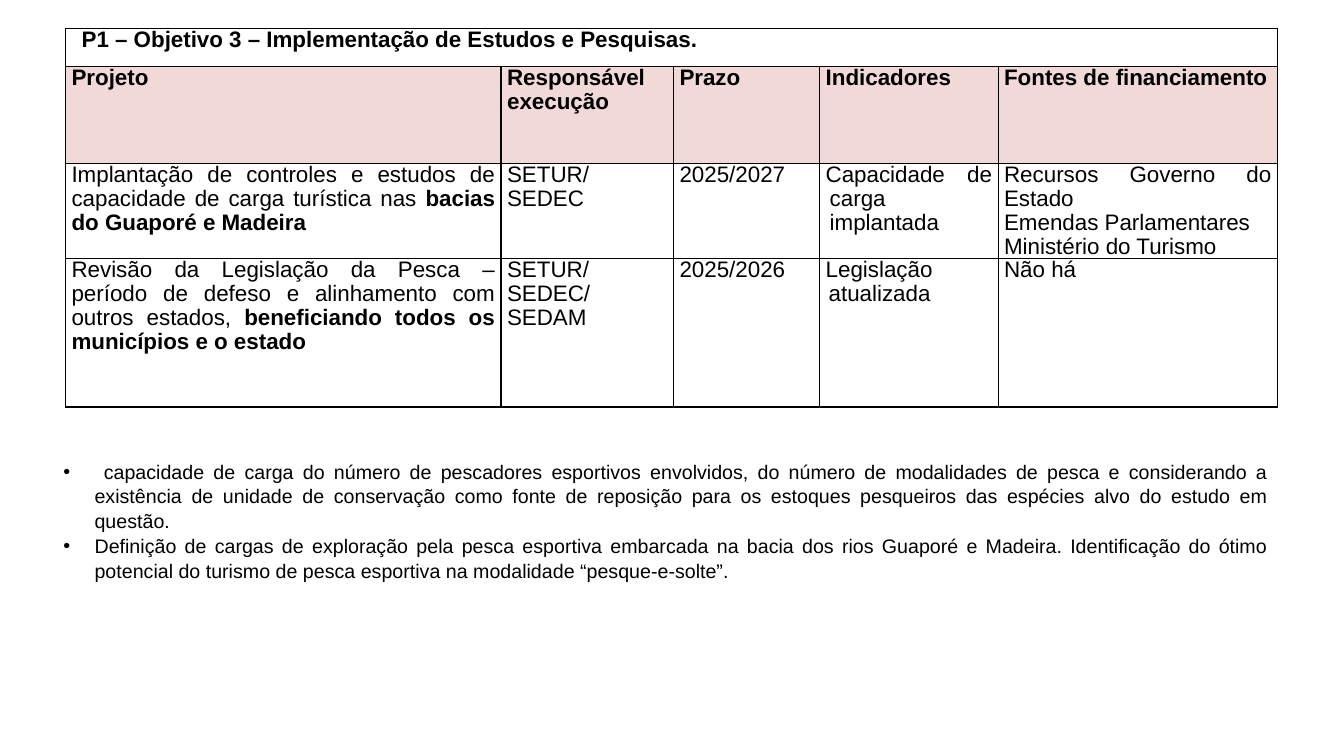
from dataclasses import dataclass

from lxml.etree import SubElement as Sub
from pptx import Presentation
from pptx.dml.color import RGBColor as RGB
from pptx.enum.text import MSO_ANCHOR as Anchor, PP_ALIGN as Align
from pptx.oxml.ns import qn
from pptx.util import Inches, Pt


@dataclass(frozen=True)
class Theme:
    font: str = "Arial"
    ink: str = "000000"
    head: str = "F0D9D7"
    cell: float = 16
    note: float = 14
    line: float = 1


@dataclass(frozen=True)
class Run:
    text: str
    bold: bool = False


@dataclass(frozen=True)
class Para:
    runs: tuple[Run, ...]
    left: float = 0
    hang: float = 0
    bullet: str = ""


LOOK = Theme()
COLS = (4.32, 1.71, 1.45, 1.77, 2.77)
ROWS = (0.38, 0.96, 0.83, 1.47)


def plain(*lines: str, bold: bool = False, left: float = 0,
          hang: float = 0, bullet: str = "") -> list[Para]:
    return [Para((Run(line, bold),), left, hang, bullet) for line in lines]


TITLE = plain("P1 – Objetivo 3 – Implementação de Estudos e Pesquisas.",
              bold=True, left=0.1)
HEADS = ("Projeto", "Responsável execução", "Prazo", "Indicadores",
         "Fontes de financiamento")
BODY = (
    (
        [Para((Run("Implantação de controles e estudos de capacidade de "
                   "carga turística nas "),
               Run("bacias do Guaporé e Madeira", True)))],
        plain("SETUR/", "SEDEC"),
        plain("2025/2027"),
        plain("Capacidade de carga implantada", left=0.04, hang=-0.04),
        plain("Recursos Governo do Estado", "Emendas Parlamentares",
              "Ministério do Turismo"),
    ),
    (
        [Para((Run("Revisão da Legislação da Pesca – período de defeso e "
                   "alinhamento com outros estados, "),
               Run("beneficiando todos os municípios e o estado", True)))],
        plain("SETUR/SEDEC/ SEDAM"),
        plain("2025/2026"),
        plain("Legislação atualizada", left=0.03, hang=-0.03),
        plain("Não há"),
    ),
)
NOTES = plain(
    " capacidade de carga do número de pescadores esportivos envolvidos, do "
    "número de modalidades de pesca e considerando a existência de unidade "
    "de conservação como fonte de reposição para os estoques pesqueiros das "
    "espécies alvo do estudo em questão. ",
    "Definição de cargas de exploração pela pesca esportiva embarcada na "
    "bacia dos rios Guaporé e Madeira. Identificação do ótimo potencial do "
    "turismo de pesca esportiva na modalidade “pesque-e-solte”. ",
    left=0.31, hang=-0.31, bullet="•")


def write(frame, paras: list[Para], size: float, space: float) -> None:
    for i, item in enumerate(paras):
        para = frame.paragraphs[0] if i == 0 else frame.add_paragraph()
        para.alignment = Align.JUSTIFY
        para.line_spacing = space
        props = para._p.get_or_add_pPr()
        props.set("marL", str(Inches(item.left)))
        props.set("indent", str(Inches(item.hang)))
        if item.bullet:
            Sub(props, qn("a:buFont"), typeface=LOOK.font)
            Sub(props, qn("a:buChar"), char=item.bullet)
        for part in item.runs:
            run = para.add_run()
            run.text = part.text
            font = run.font
            font.name, font.size, font.bold = LOOK.font, Pt(size), part.bold
            font.color.rgb = RGB.from_string(LOOK.ink)


def edge(cell) -> None:
    props = cell._tc.get_or_add_tcPr()
    for i, tag in enumerate(("lnL", "lnR", "lnT", "lnB")):
        line = props.makeelement(qn(f"a:{tag}"), {"w": str(Pt(LOOK.line))})
        fill = Sub(line, qn("a:solidFill"))
        Sub(fill, qn("a:srgbClr"), val=LOOK.ink)
        props.insert(i, line)


def draw_cell(cell, paras: list[Para], fill: str = "") -> None:
    cell.margin_left = cell.margin_right = Inches(0.06)
    cell.margin_top = cell.margin_bottom = 0
    cell.vertical_anchor = Anchor.TOP
    if fill:
        cell.fill.solid()
        cell.fill.fore_color.rgb = RGB.from_string(fill)
    else:
        cell.fill.background()
    edge(cell)
    write(cell.text_frame, paras, LOOK.cell, 0.96)


def draw_table(slide) -> None:
    grid = slide.shapes.add_table(
        len(ROWS), len(COLS), Inches(0.65), Inches(0.28),
        Inches(sum(COLS)), Inches(sum(ROWS))).table
    grid.first_row = grid.horz_banding = False
    for col, width in zip(grid.columns, COLS):
        col.width = Inches(width)
    for row, height in zip(grid.rows, ROWS):
        row.height = Inches(height)

    # Title row across all columns
    grid.cell(0, 0).merge(grid.cell(0, len(COLS) - 1))
    for c in range(len(COLS)):
        draw_cell(grid.cell(0, c), TITLE if c == 0 else [])

    # Headings and projects
    for c, head in enumerate(HEADS):
        draw_cell(grid.cell(1, c), plain(head, bold=True), LOOK.head)
    for r, row in enumerate(BODY, 2):
        for c, paras in enumerate(row):
            draw_cell(grid.cell(r, c), paras)


def draw_notes(slide) -> None:
    box = slide.shapes.add_textbox(
        Inches(0.53), Inches(4.5), Inches(12.15), Inches(1.04))
    box.text_frame.word_wrap = True
    write(box.text_frame, NOTES, LOOK.note, 1.05)


def main() -> None:
    deck = Presentation()
    deck.slide_width, deck.slide_height = Inches(13.33), Inches(7.5)
    slide = deck.slides.add_slide(deck.slide_layouts[6])
    draw_table(slide)
    draw_notes(slide)
    deck.save("out.pptx")


if __name__ == "__main__":
    main()
